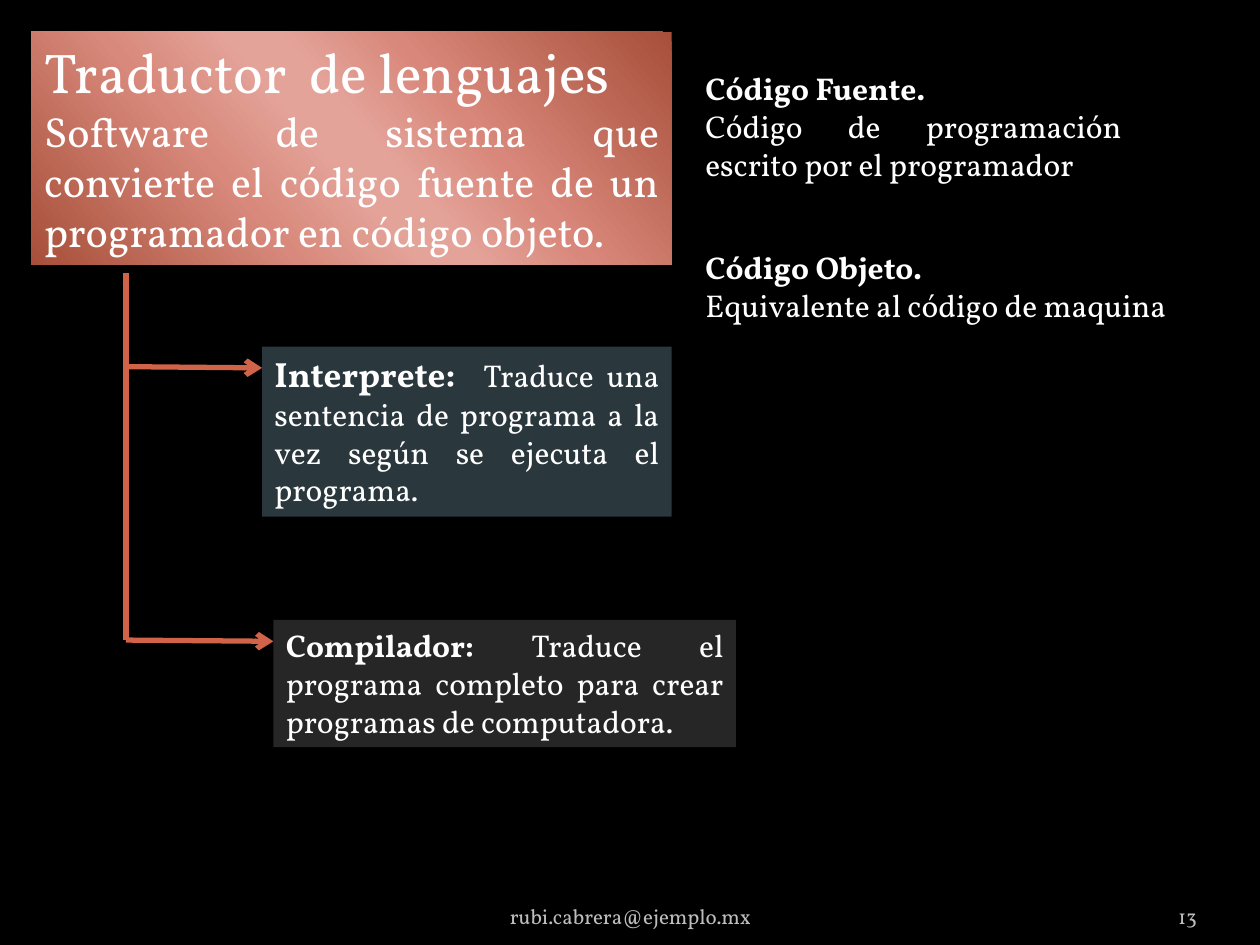
from dataclasses import dataclass

from lxml import etree
from pptx import Presentation
from pptx.dml.color import RGBColor
from pptx.enum.shapes import MSO_CONNECTOR, MSO_SHAPE
from pptx.enum.text import MSO_ANCHOR, MSO_AUTO_SIZE, PP_ALIGN
from pptx.oxml import parse_xml
from pptx.oxml.ns import nsdecls, qn
from pptx.util import Inches, Pt

LEFT, CENTER = PP_ALIGN.LEFT, PP_ALIGN.CENTER
RIGHT, JUSTIFY = PP_ALIGN.RIGHT, PP_ALIGN.JUSTIFY
TOP, BOTTOM = MSO_ANCHOR.TOP, MSO_ANCHOR.BOTTOM
FIT_SHAPE, NO_FIT = MSO_AUTO_SIZE.SHAPE_TO_FIT_TEXT, MSO_AUTO_SIZE.NONE
RECTANGLE, STRAIGHT = MSO_SHAPE.RECTANGLE, MSO_CONNECTOR.STRAIGHT


@dataclass(frozen=True)
class Theme:
    font: str = "Vollkorn"
    background: str = "000000"
    text: str = "FFFFFF"
    footer: str = "BDBDBD"
    branch: str = "D16349"
    interpreter: str = "2A373D"
    compiler: str = "262626"
    gradient: tuple = ((0, "A74F3A"), (33, "D8877A"), (47, "E4A399"),
                       (53, "E4A399"), (68, "D8897B"), (100, "A74F3A"))
    gradient_angle: int = 139
    title_size: int = 32
    definition_size: int = 24
    term_size: int = 20
    body_size: int = 18
    footer_size: int = 12
    branch_width: int = 3


THEME = Theme()


@dataclass(frozen=True)
class Span:
    text: str
    size: int = THEME.body_size
    bold: bool = False
    color: str = THEME.text


@dataclass(frozen=True)
class Line:
    spans: tuple[Span, ...]
    align: PP_ALIGN = JUSTIFY


@dataclass(frozen=True)
class Block:
    box: tuple[float, float, float, float]
    lines: tuple[Line, ...]
    fill: str | None = None
    anchor: MSO_ANCHOR = TOP
    side_margin: float = 0.1


@dataclass(frozen=True)
class Branch:
    start: tuple[float, float]
    end: tuple[float, float]
    arrow: bool = True


TRANSLATOR = Block((0.25, 0.25, 5.08, 1.85), (
    Line((Span("Traductor  de lenguajes", THEME.title_size),), LEFT),
    Line((Span("Software de sistema que convierte el código fuente de un "
               "programador en código objeto.", THEME.definition_size),)),
))

BLOCKS = (
    Block((5.5, 0.5, 3.5, 1.01), (
        Line((Span("Código Fuente.", bold=True),)),
        Line((Span("Código de programación escrito por el programador"),)),
    )),
    Block((5.5, 1.92, 4, 0.71), (
        Line((Span("Código Objeto.", bold=True),), LEFT),
        Line((Span("Equivalente al código de maquina"),), LEFT),
    )),
    Block((2.08, 2.75, 3.25, 1.35), (
        Line((Span("Interprete:  ", THEME.term_size, True),
              Span("Traduce una sentencia de programa a la vez según se "
                   "ejecuta el programa. "))),
    ), THEME.interpreter),
    Block((2.17, 4.92, 3.67, 1.01), (
        Line((Span("Compilador: ", bold=True),
              Span("Traduce el programa completo para crear programas de "
                   "computadora."))),
    ), THEME.compiler),
    Block((3.42, 7.02, 3.17, 0.4), (
        Line((Span("rubi.cabrera@ejemplo.mx", THEME.footer_size,
                   color=THEME.footer),), CENTER),
    ), anchor=BOTTOM),
    Block((8.67, 7.02, 0.83, 0.4), (
        Line((Span("13", THEME.footer_size, color=THEME.footer),), RIGHT),
    ), anchor=BOTTOM, side_margin=0),
)

BRANCHES = (
    Branch((1, 2.17), (1, 5.08), arrow=False),
    Branch((1, 2.91), (2.08, 2.92)),
    Branch((1, 5.08), (2.17, 5.09)),
)


def write_text(shape, block: Block) -> None:
    frame = shape.text_frame
    frame.word_wrap = True
    frame.auto_size = NO_FIT if block.anchor == BOTTOM else FIT_SHAPE
    frame.vertical_anchor = block.anchor
    frame.margin_left = frame.margin_right = Inches(block.side_margin)
    frame.margin_top = frame.margin_bottom = Inches(0.05)
    for index, line in enumerate(block.lines):
        paragraph = frame.add_paragraph() if index else frame.paragraphs[0]
        paragraph.alignment = line.align
        for span in line.spans:
            run = paragraph.add_run()
            run.text = span.text
            run.font.name = THEME.font
            run.font.size = Pt(span.size)
            run.font.bold = span.bold
            run.font.color.rgb = RGBColor.from_string(span.color)


def fill_with_gradient(shape) -> None:
    """Give the shape the theme's multi-stop linear gradient."""
    stops = "".join(
        f'<a:gs pos="{position * 1000}"><a:srgbClr val="{color}"/></a:gs>'
        for position, color in THEME.gradient)
    gradient = parse_xml(
        f'<a:gradFill {nsdecls("a")} rotWithShape="1"><a:gsLst>{stops}</a:gsLst>'
        f'<a:lin ang="{THEME.gradient_angle * 60000}" scaled="0"/></a:gradFill>')
    shape.fill.background()
    properties = shape.element.spPr
    properties.replace(properties.find(qn("a:noFill")), gradient)


def draw_title(slide, block: Block) -> None:
    title = slide.shapes.title
    title.left, title.top, title.width, title.height = map(Inches, block.box)
    fill_with_gradient(title)
    write_text(title, block)


def draw_block(slide, block: Block) -> None:
    box = tuple(map(Inches, block.box))
    if block.fill:
        shape = slide.shapes.add_shape(RECTANGLE, *box)
        shape.shadow.inherit = False
        shape.fill.solid()
        shape.fill.fore_color.rgb = RGBColor.from_string(block.fill)
        shape.line.fill.background()
    else:
        shape = slide.shapes.add_textbox(*box)
    write_text(shape, block)


def draw_branch(slide, branch: Branch) -> None:
    connector = slide.shapes.add_connector(
        STRAIGHT, *map(Inches, branch.start + branch.end))
    connector.line.color.rgb = RGBColor.from_string(THEME.branch)
    connector.line.width = Pt(THEME.branch_width)
    if branch.arrow:
        etree.SubElement(connector.line._get_or_add_ln(), qn("a:tailEnd"),
                         type="arrow")
    etree.SubElement(connector.element.spPr, qn("a:effectLst"))


def main() -> None:
    presentation = Presentation()
    presentation.slide_width, presentation.slide_height = Inches(10), Inches(7.5)
    slide = presentation.slides.add_slide(
        presentation.slide_layouts.get_by_name("Title Only"))
    slide.background.fill.solid()
    slide.background.fill.fore_color.rgb = RGBColor.from_string(THEME.background)
    draw_title(slide, TRANSLATOR)
    for branch in BRANCHES:
        draw_branch(slide, branch)
    for block in BLOCKS:
        draw_block(slide, block)
    presentation.save("out.pptx")


if __name__ == "__main__":
    main()
